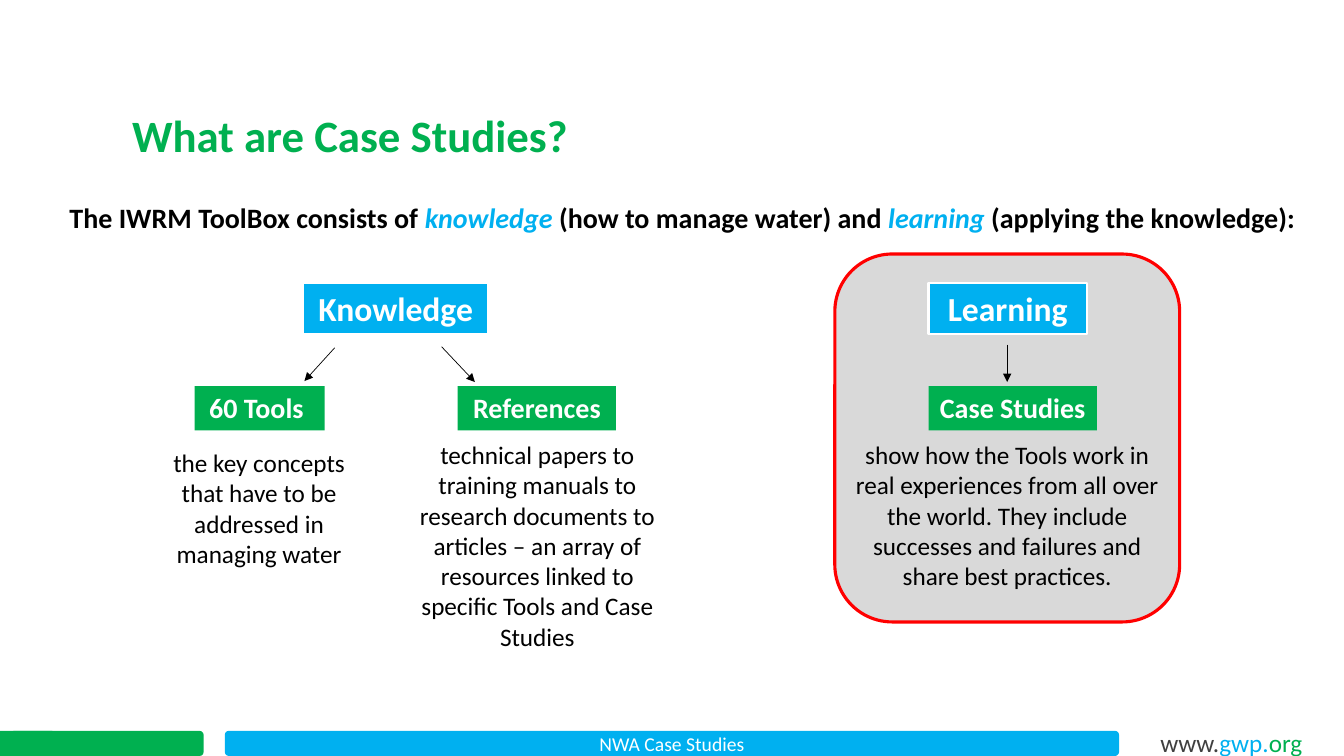
from lxml.etree import SubElement
from pptx import Presentation
from pptx.dml.color import RGBColor
from pptx.enum.shapes import MSO_CONNECTOR, MSO_SHAPE
from pptx.enum.text import MSO_ANCHOR, PP_ALIGN
from pptx.oxml.ns import qn
from pptx.util import Inches, Pt

COLORS = {"green": "00B050", "blue": "00B0F0", "white": "FFFFFF", "black": "000000",
          "grey": "D9D9D9", "red": "FF0000", "dark": "404040"}

# Each run is (text, colour, italic)
TITLE = [("What are Case Studies?", "green", False)]
STATEMENT = [
    ("The IWRM ToolBox consists of ", "black", False),
    ("knowledge", "blue", True),
    (" (how to manage water) and ", "black", False),
    ("learning ", "blue", True),
    ("(applying the knowledge):", "black", False),
]
FOOTER = [("NWA Case Studies", "white", False)]
ADDRESS = [("www.", "dark", False), ("gwp.", "blue", False), ("org", "green", False)]

# Text, left, width
HEADINGS = [("Knowledge", 3.01, 1.83), ("Learning", 9.21, 1.57)]
TOPICS = [("60 Tools ", 1.93, 1.29), ("References", 4.54, 1.57), ("Case Studies", 9.21, 1.67)]
# Text, left, top, width, height
DESCRIPTIONS = [
    ("the key concepts that have to be addressed in managing water", 1.6, 4.39, 1.94, 1.3),
    ("technical papers to training manuals to research documents to articles – "
     "an array of resources linked to specific Tools and Case Studies", 3.88, 4.31, 2.9, 2.22),
    ("show how the Tools work in real experiences from all over the world. "
     "They include successes and failures and share best practices.", 8.28, 4.31, 3.42, 1.62),
]
# Start x, start y, end x, end y
ARROWS = [(3.32, 3.45, 3.02, 3.78), (4.38, 3.44, 4.71, 3.79), (9.99, 3.42, 9.99, 3.79)]

WIDTH, HEIGHT = 13.33, 7.5
HEADING_TOP, HEADING_HEIGHT = 2.81, 0.5
TOPIC_TOP, TOPIC_HEIGHT = 3.83, 0.44
BAR_HEIGHT = 0.25
BAR_TOP = HEIGHT - BAR_HEIGHT


def color(name):
    return RGBColor.from_string(COLORS[name])


def write(shape, runs, size, bold=False, align=PP_ALIGN.CENTER, anchor=MSO_ANCHOR.TOP):
    frame = shape.text_frame
    frame.word_wrap = True
    frame.vertical_anchor = anchor
    paragraph = frame.paragraphs[0]
    paragraph.alignment = align
    for text, color_name, italic in runs:
        run = paragraph.add_run()
        run.text = text
        font_format = {"name": "Calibri", "size": Pt(size), "bold": bold, "italic": italic}
        for attribute, value in font_format.items():
            setattr(run.font, attribute, value)
        run.font.color.rgb = color(color_name)
    return paragraph


def add_box(slide, kind, box, fill, line=None, line_width=1.5):
    shape = slide.shapes.add_shape(kind, *map(Inches, box))
    shape.shadow.inherit = False
    shape.fill.solid()
    shape.fill.fore_color.rgb = color(fill)
    if line:
        shape.line.color.rgb = color(line)
        shape.line.width = Pt(line_width)
    else:
        shape.line.fill.background()
    return shape


def add_text(slide, box, runs, size, **options):
    return write(slide.shapes.add_textbox(*map(Inches, box)), runs, size, **options)


def add_arrow(slide, ends):
    arrow = slide.shapes.add_connector(MSO_CONNECTOR.STRAIGHT, *map(Inches, ends))
    arrow.line.color.rgb = color("black")
    arrow.line.width = Pt(0.5)
    SubElement(arrow.line._get_or_add_ln(), qn("a:tailEnd"), type="triangle")
    SubElement(arrow._element.spPr, qn("a:effectLst"))


def add_footer(slide):
    rounded, plain = MSO_SHAPE.ROUNDED_RECTANGLE, MSO_SHAPE.RECTANGLE
    add_box(slide, rounded, (0.1, BAR_TOP, 1.92, BAR_HEIGHT), "green")
    bar = add_box(slide, rounded, (2.23, BAR_TOP, 8.87, BAR_HEIGHT), "blue")
    write(bar, FOOTER, 14, anchor=MSO_ANCHOR.MIDDLE)
    address = add_box(slide, plain, (11.41, 7.12, 1.64, 0.38), "white")
    write(address, ADDRESS, 18, align=PP_ALIGN.LEFT).line_spacing = 1.15
    add_box(slide, plain, (0, BAR_TOP, 0.52, BAR_HEIGHT), "green")


def main():
    presentation = Presentation()
    presentation.slide_width, presentation.slide_height = Inches(WIDTH), Inches(HEIGHT)
    slide = presentation.slides.add_slide(presentation.slide_layouts[5])

    title = slide.shapes.title
    title.left, title.top, title.width, title.height = map(Inches, (1.21, 1.02, 5.32, 0.64))
    write(title, TITLE, 32, bold=True, align=PP_ALIGN.LEFT)

    add_footer(slide)
    add_box(slide, MSO_SHAPE.ROUNDED_RECTANGLE, (8.28, 2.52, 3.42, 3.65), "grey", "red", 2.25)
    add_text(slide, (0.59, 1.94, 12.38, 0.44), STATEMENT, 20, bold=True, align=PP_ALIGN.JUSTIFY)

    for text, left, width in HEADINGS:
        heading = add_box(slide, MSO_SHAPE.RECTANGLE,
                          (left, HEADING_TOP, width, HEADING_HEIGHT), "blue", "white")
        write(heading, [(text, "white", False)], 24, bold=True)
    for text, *box in DESCRIPTIONS:
        add_text(slide, box, [(text, "black", False)], 18)
    for ends in ARROWS:
        add_arrow(slide, ends)
    for text, left, width in TOPICS:
        topic = add_box(slide, MSO_SHAPE.RECTANGLE,
                        (left, TOPIC_TOP, width, TOPIC_HEIGHT), "green")
        write(topic, [(text, "white", False)], 20, bold=True)

    presentation.save("out.pptx")


if __name__ == "__main__":
    main()
